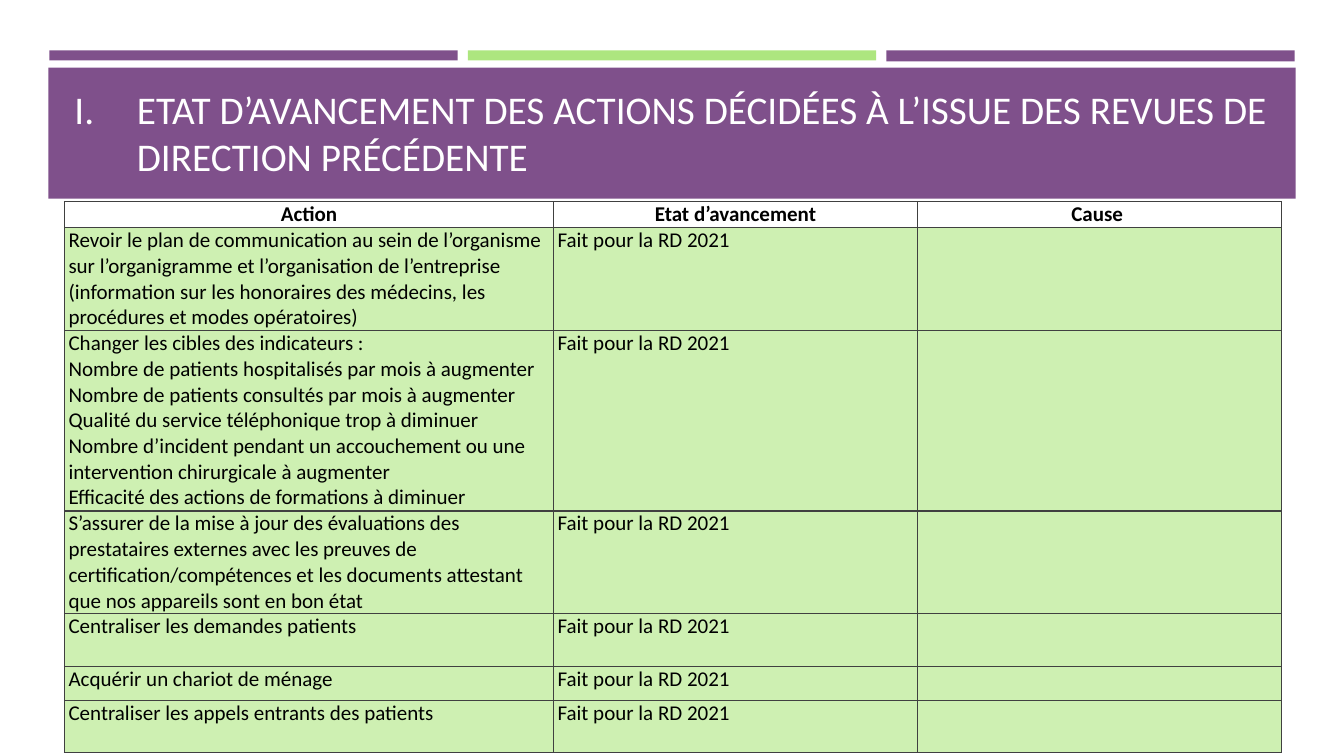
from dataclasses import dataclass

from lxml.etree import SubElement
from pptx import Presentation
from pptx.dml.color import RGBColor
from pptx.enum.shapes import MSO_SHAPE
from pptx.enum.text import MSO_ANCHOR, PP_ALIGN
from pptx.oxml.ns import qn
from pptx.util import Inches, Pt

FONT = "Calibri"
PURPLE = "7F508B"
GREEN = "ADE67F"
PALE_GREEN = "CEF0B2"
BORDER = "404040"
WHITE = "FFFFFF"
BLACK = "000000"

TITLE = "ETAT D’AVANCEMENT DES ACTIONS DÉCIDÉES À L’ISSUE DES REVUES DE DIRECTION PRÉCÉDENTE"
HEADERS = ["Action", "Etat d’avancement", "Cause "]
STATUS = "Fait pour la RD 2021"
COLUMN_WIDTHS = [4.85, 3.61, 3.61]
HEADER_HEIGHT = 0.26


@dataclass
class Band:
    left: float
    top: float
    width: float
    height: float
    color: str


@dataclass
class Action:
    height: float
    lines: list[str]


BANDS = [
    Band(0.49, 0.5, 4.05, 0.1, PURPLE),
    Band(4.64, 0.5, 4.05, 0.1, GREEN),
    Band(8.79, 0.5, 4.05, 0.11, PURPLE),
    Band(0.48, 0.67, 12.37, 1.3, PURPLE),
]

ACTIONS = [
    Action(1.02, [
        "Revoir le plan de communication au sein de l’organisme sur l’organigramme et "
        "l’organisation de l’entreprise (information sur les honoraires des médecins, "
        "les procédures et modes opératoires)",
    ]),
    Action(1.79, [
        "Changer les cibles des indicateurs :",
        "Nombre de patients hospitalisés par mois à augmenter",
        "Nombre de patients consultés par mois à augmenter",
        "Qualité du service téléphonique trop à diminuer",
        "Nombre d’incident pendant un accouchement ou une intervention chirurgicale à augmenter",
        "Efficacité des actions de formations à diminuer",
    ]),
    Action(1.02, [
        "S’assurer de la mise à jour des évaluations des prestataires externes avec les "
        "preuves de certification/compétences et les documents attestant que nos appareils "
        "sont en bon état",
    ]),
    Action(0.52, ["Centraliser les demandes patients"]),
    Action(0.34, ["Acquérir un chariot de ménage"]),
    Action(0.52, ["Centraliser les appels entrants des patients"]),
]


def rgb(color: str) -> RGBColor:
    return RGBColor.from_string(color)


def set_attributes(target, values: dict) -> None:
    for name, value in values.items():
        setattr(target, name, value)


def add_text(paragraph, text: str, size: float, color: str, bold: bool = False) -> None:
    run = paragraph.add_run()
    run.text = text
    set_attributes(run.font, {"name": FONT, "size": Pt(size), "bold": bold})
    run.font.color.rgb = rgb(color)


def add_band(slide, band: Band) -> None:
    shape = slide.shapes.add_shape(
        MSO_SHAPE.RECTANGLE,
        Inches(band.left), Inches(band.top), Inches(band.width), Inches(band.height),
    )
    shape.shadow.inherit = False
    shape.fill.solid()
    shape.fill.fore_color.rgb = rgb(band.color)
    shape.line.fill.background()


def add_title(slide) -> None:
    box = slide.shapes.add_textbox(Inches(0.64), Inches(0.65), Inches(12.06), Inches(1.65))
    set_attributes(box.text_frame, {
        "word_wrap": True,
        "vertical_anchor": MSO_ANCHOR.BOTTOM,
        "margin_bottom": Inches(0.52),
    })
    paragraph = box.text_frame.paragraphs[0]
    properties = paragraph._p.get_or_add_pPr()
    properties.set("marL", str(Inches(0.62)))
    properties.set("indent", str(-Inches(0.62)))
    bullet_color = SubElement(properties, qn("a:buClr"))
    SubElement(bullet_color, qn("a:srgbClr"), val=WHITE)
    SubElement(properties, qn("a:buFont"), typeface=FONT)
    SubElement(properties, qn("a:buAutoNum"), type="romanUcPeriod")
    add_text(paragraph, TITLE, 28, WHITE)


def add_borders(cell) -> None:
    properties = cell._tc.get_or_add_tcPr()
    for side in ("lnL", "lnR", "lnT", "lnB"):
        line = SubElement(properties, qn(f"a:{side}"), w=str(Pt(1)))
        fill = SubElement(line, qn("a:solidFill"))
        SubElement(fill, qn("a:srgbClr"), val=BORDER)


def fill_cell(cell, lines: list[str], header: bool) -> None:
    side_margin = Inches(0.06 if header else 0.04)
    set_attributes(cell, {
        "margin_left": side_margin,
        "margin_right": side_margin,
        "margin_top": 0,
        "margin_bottom": 0,
        "vertical_anchor": MSO_ANCHOR.MIDDLE if header else MSO_ANCHOR.TOP,
    })
    add_borders(cell)
    if header:
        cell.fill.background()
    else:
        cell.fill.solid()
        cell.fill.fore_color.rgb = rgb(PALE_GREEN)
    for index, line in enumerate(lines):
        frame = cell.text_frame
        paragraph = frame.add_paragraph() if index else frame.paragraphs[0]
        paragraph.alignment = PP_ALIGN.CENTER if header else PP_ALIGN.LEFT
        add_text(paragraph, line, 15, BLACK, bold=header)


def add_action_table(slide) -> None:
    heights = [HEADER_HEIGHT] + [action.height for action in ACTIONS]
    contents = [[[header] for header in HEADERS]]
    contents += [[action.lines, [STATUS], []] for action in ACTIONS]
    table = slide.shapes.add_table(
        len(heights), len(COLUMN_WIDTHS),
        Inches(0.64), Inches(2), Inches(sum(COLUMN_WIDTHS)), Inches(sum(heights)),
    ).table
    set_attributes(table, {"first_row": False, "horz_banding": False})
    for column, width in zip(table.columns, COLUMN_WIDTHS):
        column.width = Inches(width)
    for row_index, (row, height) in enumerate(zip(table.rows, heights)):
        row.height = Inches(height)
        for cell, lines in zip(row.cells, contents[row_index]):
            fill_cell(cell, lines, header=row_index == 0)


def main() -> None:
    presentation = Presentation()
    set_attributes(presentation, {"slide_width": Inches(13.33), "slide_height": Inches(7.5)})
    slide = presentation.slides.add_slide(presentation.slide_layouts[6])
    for band in BANDS:
        add_band(slide, band)
    add_title(slide)
    add_action_table(slide)
    presentation.save("out.pptx")


if __name__ == "__main__":
    main()
